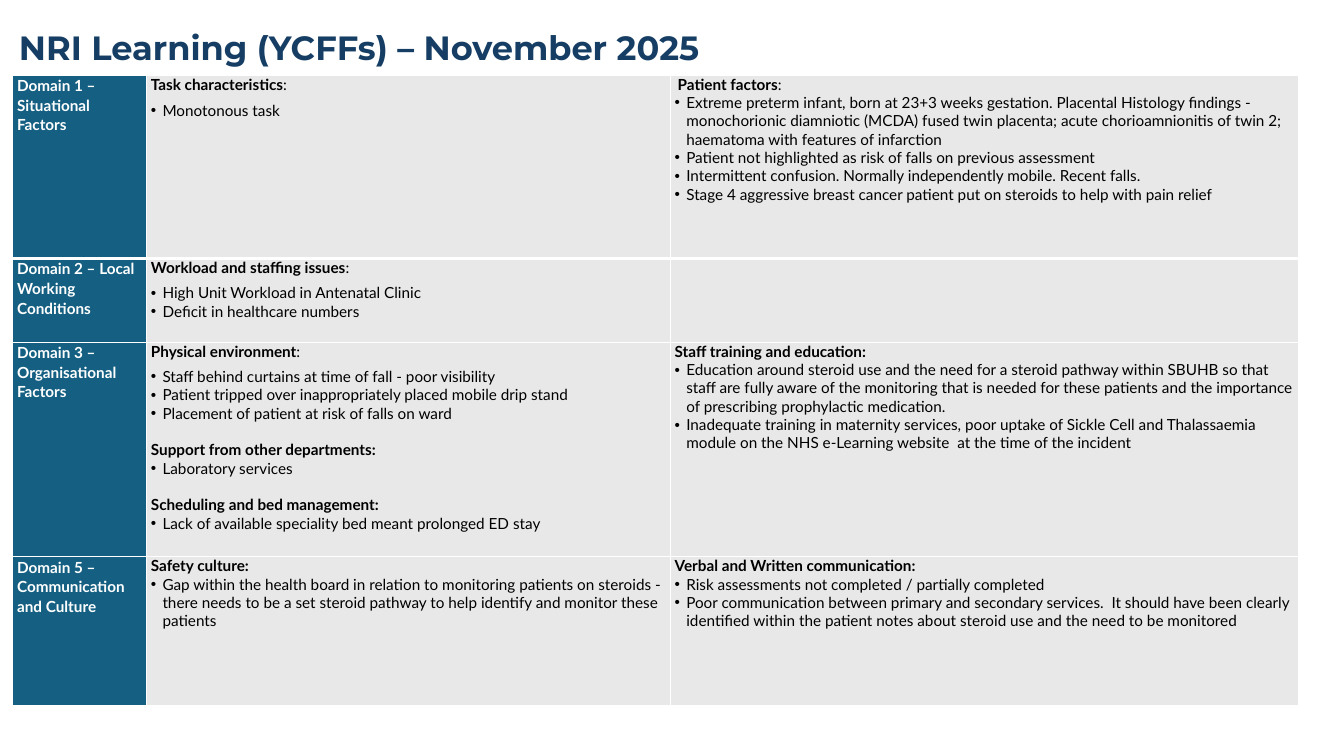
import pptx
import pptx.dml.color
import pptx.enum.text
import pptx.oxml
import pptx.oxml.ns
import pptx.util

RGBColor = pptx.dml.color.RGBColor
Inches, Pt = pptx.util.Inches, pptx.util.Pt

NAVY = RGBColor(0x16, 0x3E, 0x64)
TEAL = RGBColor(0x15, 0x60, 0x82)
GREY = RGBColor(0xE8, 0xE8, 0xE8)
WHITE = RGBColor(0xFF, 0xFF, 0xFF)
BLACK = RGBColor(0, 0, 0)

LEFT, TOP = 0.21, 1.23
COLUMNS = [2.19, 8.57, 10.27]
ROWS = [3, 1.37, 3.51, 2.44]
BULLET_INDENT = Inches(0.19)
LINE = 21.6

# Each topic: heading, bold colon, points after the heading, bullets
DOMAINS = [
    ("Domain 1 – Situational Factors",
     [("Task characteristics", False, 9, ["Monotonous task"])],
     [("Patient factors", False, 0, [
         "Extreme preterm infant, born at 23+3 weeks gestation. Placental Histology findings - "
         "monochorionic diamniotic (MCDA) fused twin placenta; acute chorioamnionitis of twin 2; "
         "haematoma with features of infarction",
         "Patient not highlighted as risk of falls on previous assessment",
         "Intermittent confusion. Normally independently mobile. Recent falls.",
         "Stage 4 aggressive breast cancer patient put on steroids to help with pain relief"])]),
    ("Domain 2 – Local Working Conditions",
     [("Workload and staffing issues", False, 8, [
         "High Unit Workload in Antenatal Clinic",
         "Deficit in healthcare numbers"])],
     []),
    ("Domain 3 – Organisational Factors",
     [("Physical environment", False, 8, [
         "Staff behind curtains at time of fall - poor visibility",
         "Patient tripped over inappropriately placed mobile drip stand",
         "Placement of patient at risk of falls on ward"]),
      ("Support from other departments", True, 0, ["Laboratory services"]),
      ("Scheduling and bed management", True, 0, [
          "Lack of available speciality bed meant prolonged ED stay"])],
     [("Staff training and education", True, 0, [
         "Education around steroid use and the need for a steroid pathway within SBUHB so that "
         "staff are fully aware of the monitoring that is needed for these patients and the "
         "importance of prescribing prophylactic medication.",
         "Inadequate training in maternity services, poor uptake of Sickle Cell and Thalassaemia "
         "module on the NHS e-Learning website  at the time of the incident"])]),
    ("Domain 5 – Communication and Culture",
     [("Safety culture", True, 0, [
         "Gap within the health board in relation to monitoring patients on steroids - there needs "
         "to be a set steroid pathway to help identify and monitor these patients"])],
     [("Verbal and Written communication", True, 0, [
         "Risk assessments not completed / partially completed",
         "Poor communication between primary and secondary services.  It should have been clearly "
         "identified within the patient notes about steroid use and the need to be monitored"])]),
]


def add_text(paragraph, text, bold=False, color=BLACK, size=18, font="Lato"):
    run = paragraph.add_run()
    run.text = text
    for name, value in {"name": font, "size": Pt(size), "bold": bold}.items():
        setattr(run.font, name, value)
    run.font.color.rgb = color


def style_cell(cell, fill, row):
    """Set the insets, white borders and fill of a cell."""
    for side, inset in {"left": 0.07, "right": 0.07, "top": 0, "bottom": 0}.items():
        setattr(cell, f"margin_{side}", Inches(inset))
    widths = {"L": 1, "R": 1, "T": 3 if row == 1 else 1, "B": 3 if row == 0 else 1}
    for side, width in widths.items():
        cell._tc.get_or_add_tcPr().append(pptx.oxml.parse_xml(
            f'<a:ln{side} {pptx.oxml.ns.nsdecls("a")} w="{Pt(width)}">'
            f'<a:solidFill><a:srgbClr val="{WHITE}"/></a:solidFill></a:ln{side}>'))
    cell.fill.solid()
    cell.fill.fore_color.rgb = fill


deck = pptx.Presentation()
deck.slide_width, deck.slide_height = Inches(21.99), Inches(12.37)
slide = deck.slides.add_slide(deck.slide_layouts[5])

title = slide.shapes.title
title.left, title.top, title.width, title.height = map(Inches, (LEFT, 0.39, 12.06, 0.77))
title_format = {
    "word_wrap": False,
    "auto_size": pptx.enum.text.MSO_AUTO_SIZE.NONE,
    "vertical_anchor": pptx.enum.text.MSO_ANCHOR.MIDDLE,
}
for name, value in title_format.items():
    setattr(title.text_frame, name, value)
heading_line = title.text_frame.paragraphs[0]
heading_line.alignment = pptx.enum.text.PP_ALIGN.LEFT
add_text(heading_line, "NRI Learning (YCFFs) – November 2025", True, NAVY, 39.6, "Montserrat")

learning = slide.shapes.add_table(
    len(ROWS), len(COLUMNS), Inches(LEFT), Inches(TOP),
    Inches(sum(COLUMNS)), Inches(sum(ROWS))).table
learning.first_row = learning.horz_banding = False
for column, width in zip(learning.columns, COLUMNS):
    column.width = Inches(width)
for table_row, height in zip(learning.rows, ROWS):
    table_row.height = Inches(height)

for row, (domain, *factors) in enumerate(DOMAINS):
    domain_cell = learning.cell(row, 0)
    style_cell(domain_cell, TEAL, row)
    domain_line = domain_cell.text_frame.paragraphs[0]
    domain_line.line_spacing = 1.07
    add_text(domain_line, domain, True, WHITE)

    for col, topics in enumerate(factors, 1):
        cell = learning.cell(row, col)
        style_cell(cell, GREY, row)
        for index, (heading, bold_colon, gap, bullets) in enumerate(topics):
            if index == 0:
                topic_line = cell.text_frame.paragraphs[0]
            else:
                topic_line = cell.text_frame.add_paragraph()
                topic_line.space_before = Pt(LINE)
            topic_line.space_after = Pt(gap)
            if heading == "Patient factors":
                topic_line._p.get_or_add_pPr().set("marL", str(Inches(0.05)))
            add_text(topic_line, heading, True)
            add_text(topic_line, ":", bold_colon)
            for bullet in bullets:
                point = cell.text_frame.add_paragraph()
                properties = point._p.get_or_add_pPr()
                properties.set("marL", str(BULLET_INDENT))
                properties.set("indent", str(-BULLET_INDENT))
                properties.append(pptx.oxml.parse_xml(
                    f'<a:buFont {pptx.oxml.ns.nsdecls("a")} typeface="Arial"/>'))
                properties.append(pptx.oxml.parse_xml(
                    f'<a:buChar {pptx.oxml.ns.nsdecls("a")} char="•"/>'))
                add_text(point, bullet)

deck.save("out.pptx")
